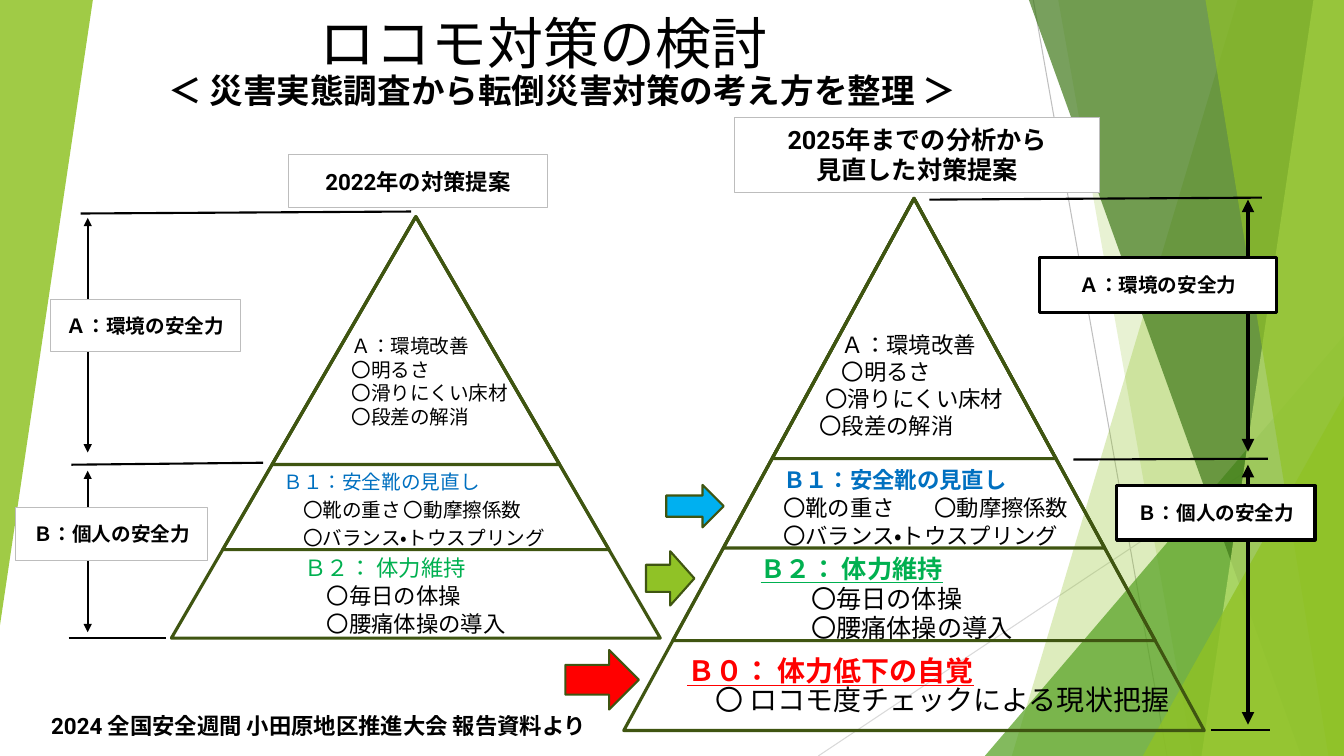
from lxml import etree
from pptx import Presentation
from pptx.dml.color import RGBColor
from pptx.enum.lang import MSO_LANGUAGE_ID
from pptx.enum.shapes import MSO_CONNECTOR, MSO_SHAPE
from pptx.enum.text import MSO_ANCHOR, MSO_AUTO_SIZE, PP_ALIGN
from pptx.oxml.ns import qn
from pptx.util import Cm, Pt

LEFT, CENTER = PP_ALIGN.LEFT, PP_ALIGN.CENTER
TOP, MIDDLE, BOTTOM = MSO_ANCHOR.TOP, MSO_ANCHOR.MIDDLE, MSO_ANCHOR.BOTTOM
TRIANGLE, RECT, ARROW = MSO_SHAPE.ISOSCELES_TRIANGLE, MSO_SHAPE.RECTANGLE, MSO_SHAPE.RIGHT_ARROW
STRAIGHT = MSO_CONNECTOR.STRAIGHT
JAPANESE = MSO_LANGUAGE_ID.JAPANESE
W, H = 33.87, 19.05
FONT = "Roboto"
BLACK, WHITE, GRAY, OLIVE, LIME = "000000", "FFFFFF", "BDBDBD", "3F5511", "90C226"
BLUE, GREEN, RED, SKY = "0070C0", "00B050", "FF0000", "00B0F0"
TAB_EMS = 8.25

# Left edge at the top, left edge at the bottom, top, colour, opacity
FACETS = [
    (31.19, 25.5, 0, LIME, 30), (26.67, 30.05, 0, LIME, 20), (W, 24.82, 8.46, "54A021", 72),
    (25.93, 32.79, 0, "3F7819", 70), (33.1, 30.28, 0, "C0E474", 70),
    (30.38, 33.48, 0, LIME, 65), (W, 28.8, 9.98, LIME, 80),
]

# Offsets are in cm from the panel's corner; text lines are (indent in ems, text, style)
PLAN_2022 = dict(
    pyramid=(3.92, 1.57, 12.32, 10.62), levels=(1, 0.79, 0.588),
    rules=[(1.63, 1.49, 9.96, 1.44), (1.4, 7.82, 6.23, 7.77), (1.33, 12.19, 3.79, 12.19)],
    spans=[(1.81, 1.6, 7.51), (1.81, 7.97, 12.04)], span_width=1.5,
    heading=((6.86, 0, 6.55, 1.35), 16, ["2022年の対策提案"]),
    labels=[((0.87, 3.65, 4.8, 1.32), "Ａ：環境の安全力"), ((0, 8.91, 4.83, 1.32), "Ｂ：個人の安全力")],
    label_line=(GRAY, 0.75),
    blocks=[
        ((7.22, 3.76, 6.48, 3.91), 14, None,
         [(2, "Ａ：環境改善", {}), (2, "〇明るさ", {}), (2, "〇滑りにくい床材", {}), (2, "〇段差の解消", {})]),
        ((6, 7.72, 8.79, 2.36), 14, 20,
         [(1, "Ｂ１：安全靴の見直し", dict(color=BLUE)), (2, "〇靴の重さ\t〇動摩擦係数", {}),
          (2, "〇バランス・トウスプリング", {})]),
        ((6.46, 9.93, 6.83, 2.36), 16, 20,
         [(1, "Ｂ２： 体力維持", dict(color=GREEN)), (2, "〇毎日の体操", {}), (2, "〇腰痛体操の導入", {})]),
    ],
    pointers=[],
)
PLAN_2025 = dict(
    pyramid=(1.47, 2.05, 14.63, 13.41), levels=(1, 0.831, 0.657, 0.489),
    rules=[(9.17, 2.08, 17.55, 2.03), (12.8, 8.63, 17.7, 8.61), (16.28, 15.44, 17.75, 15.44)],
    spans=[(17.2, 2.08, 8.43), (17.2, 8.76, 15.31)], span_width=3,
    heading=((4.27, 0, 9.19, 1.9), 18, ["2025年までの分析から", "見直した対策提案"]),
    labels=[((11.94, 3.55, 5.99, 1.37), "Ａ：環境の安全力"), ((13.89, 9.29, 5, 1.37), "Ｂ：個人の安全力")],
    label_line=(BLACK, 2.25),
    blocks=[
        ((5.59, 4.7, 6.4, 4.11), 16, None,
         [(2, "Ａ：環境改善", {}), (2, "〇明るさ", {}), (1.25, "〇滑りにくい床材", {}), (1, "〇段差の解消", {})]),
        ((4.11, 8.58, 10.19, 2.49), 16, 20,
         [(2, "Ｂ１：安全靴の見直し", dict(color=BLUE, bold=True)), (2, "〇靴の重さ\t〇動摩擦係数", {}),
          (2, "〇バランス・トウスプリング", {})]),
        ((4.67, 10.89, 10.19, 2.49), 18, 21,
         [(0, "Ｂ２： 体力維持", dict(color=GREEN, bold=True, underline=True)),
          (2, "〇毎日の体操", {}), (2, "〇腰痛体操の導入", {})]),
        ((2.11, 13.41, 14.68, 1.91), 20, 21,
         [(1, "Ｂ０： 体力低下の自覚", dict(color=RED, bold=True, underline=True)),
          (2, "〇 ロコモ度チェックによる現状把握", {})]),
    ],
    pointers=[((2.54, 9.27, 1.45, 1.07), SKY), ((2.03, 10.94, 1.22, 1.37), LIME), ((0, 13.43, 1.85, 1.5), RED)],
)


def rgb(color):
    return RGBColor.from_string(color)


def cm(box):
    return [Cm(v) for v in box]


def inside(box, part):
    return box[0] + part[0], box[1] + part[1], part[2], part[3]


def paint(sp, fill=None, line=None, width=1, opacity=100):
    sp.shadow.inherit = False
    if fill:
        sp.fill.solid()
        sp.fill.fore_color.rgb = rgb(fill)
        if opacity < 100:
            color = sp.fill._xPr.find(".//" + qn("a:srgbClr"))
            etree.SubElement(color, qn("a:alpha"), val=str(opacity * 1000))
    else:
        sp.fill.background()
    if line:
        sp.line.color.rgb = rgb(line)
        sp.line.width = Pt(width)
    else:
        sp.line.fill.background()


def add_preset(s, kind, box, **style):
    sp = s.shapes.add_shape(kind, *cm(box))
    paint(sp, **style)
    return sp


def add_line(s, ends, color, width, arrows=False):
    sp = s.shapes.add_connector(STRAIGHT, *cm(ends))
    sp.line.color.rgb = rgb(color)
    sp.line.width = Pt(width)
    if arrows:
        for tag in ("a:headEnd", "a:tailEnd"):
            etree.SubElement(sp.line._get_or_add_ln(), qn(tag), type="triangle")
    etree.SubElement(sp._element.spPr, qn("a:effectLst"))


def write(sp, lines, size, anchor=MIDDLE, align=LEFT, spacing=None, bold=False):
    """Fill a shape with (indent in ems, text, style) lines."""
    tf = sp.text_frame
    tf.word_wrap = True
    tf.auto_size = MSO_AUTO_SIZE.NONE
    tf.vertical_anchor = anchor
    for i, (ems, text, style) in enumerate(lines):
        p = tf.add_paragraph() if i else tf.paragraphs[0]
        p.alignment = align
        if spacing:
            p.line_spacing = Pt(spacing)
        pPr = p._p.get_or_add_pPr()
        pPr.set("marL", str(Pt(ems * size)))
        pPr.set("indent", "0")
        if "\t" in text:
            tabs = etree.SubElement(pPr, qn("a:tabLst"))
            etree.SubElement(tabs, qn("a:tab"), pos=str(Pt(TAB_EMS * size)), algn="l")
        r = p.add_run()
        r.text = text
        r.font.name = FONT
        r.font.size = Pt(size)
        r.font.bold = style.get("bold", bold)
        r.font.underline = style.get("underline", False)
        r.font.color.rgb = rgb(style.get("color", BLACK))
        r.font.language_id = JAPANESE


def add_text(s, box, lines, size, **style):
    write(s.shapes.add_textbox(*cm(box)), lines, size, **style)


def add_label(s, box, texts, size, line):
    sp = add_preset(s, RECT, box, fill=WHITE, line=line[0], width=line[1])
    write(sp, [(0, text, {}) for text in texts], size, align=CENTER, bold=True)


def add_backdrop(s, w, h):
    add_line(s, (26.04, 0, 29.41, h), "BFBFBF", 0.75)
    add_line(s, (w, 10.24, 20.62, h), "D9D9D9", 0.75)
    for upper, lower, top, color, opacity in FACETS:
        if top:
            sp = s.shapes.add_shape(TRIANGLE, *cm((lower, top, w - lower, h - top)))
            sp.adjustments[0] = 1
        else:
            outline = s.shapes.build_freeform(Cm(upper), 0)
            outline.add_line_segments([cm(pt) for pt in ((w, 0), (w, h), (lower, h))])
            sp = outline.convert_to_shape()
        paint(sp, fill=color, opacity=opacity)
    corner = add_preset(s, TRIANGLE, (0, 0, 2.34, 15.75), fill=LIME, opacity=85)
    corner.adjustments[0] = 1
    corner.rotation = 180


def add_headings(s, box):
    x, y, w, h = box
    title = s.shapes.title
    title.left, title.top, title.width, title.height = cm((x + 3.81, y, 13.87, 1.78))
    write(title, [(0, "ロコモ対策の検討", {})], 40, anchor=BOTTOM)
    add_text(s, (x, y + 1.38, w, h - 1.38), [(0, "＜ 災害実態調査から転倒災害対策の考え方を整理 ＞", {})],
             24, anchor=TOP, bold=True)


def add_source_note(s, box):
    add_text(s, box, [(0, "2024 全国安全週間 小田原地区推進大会 報告資料より", {})], 16, anchor=TOP, bold=True)


def add_pyramid(s, box, levels):
    """Nest triangles that share the apex, one for each scale in levels."""
    x, y, w, h = box
    for k in levels:
        add_preset(s, TRIANGLE, (x + w * (1 - k) / 2, y, w * k, h * k), line=OLIVE, width=2.25)


def add_plan(s, corner, plan):
    x, y = corner
    add_pyramid(s, inside(corner, plan["pyramid"]), plan["levels"])
    for x1, y1, x2, y2 in plan["rules"]:
        add_line(s, (x + x1, y + y1, x + x2, y + y2), BLACK, 1.5)
    for dx, upper, lower in plan["spans"]:
        add_line(s, (x + dx, y + lower, x + dx, y + upper), BLACK, plan["span_width"], arrows=True)
    part, size, texts = plan["heading"]
    add_label(s, inside(corner, part), texts, size, (GRAY, 0.75))
    for part, text in plan["labels"]:
        add_label(s, inside(corner, part), [text], 14, plan["label_line"])
    for part, size, spacing, lines in plan["blocks"]:
        add_text(s, inside(corner, part), lines, size, spacing=spacing)
    for part, color in plan["pointers"]:
        add_preset(s, ARROW, inside(corner, part), fill=color, line=OLIVE, width=1.5)


def main():
    prs = Presentation()
    prs.slide_width, prs.slide_height = Cm(W), Cm(H)
    s = prs.slides.add_slide(prs.slide_layouts[5])
    add_backdrop(s, W, H)
    add_source_note(s, (1.04, 17.81, 15.14, 0.76))
    add_headings(s, (3.99, 0.25, 23.7, 2.7))
    add_plan(s, (0.4, 3.89), PLAN_2022)
    add_plan(s, (14.25, 2.95), PLAN_2025)
    prs.save("out.pptx")


if __name__ == "__main__":
    main()
